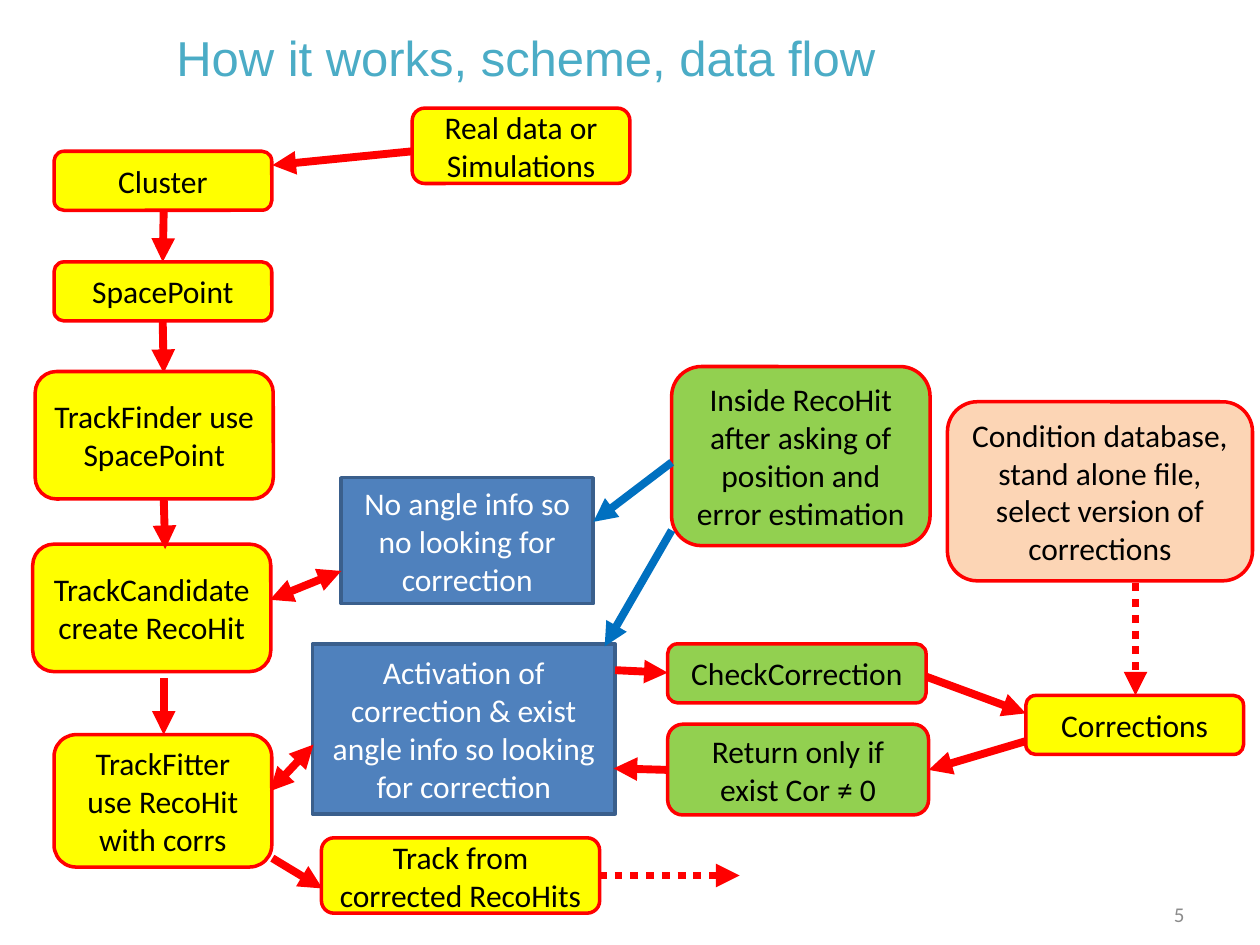
from lxml import etree
from pptx import Presentation
from pptx.dml import color
from pptx.enum import dml, shapes, text
from pptx.oxml import ns
from pptx.util import Cm, Pt

RED, BLUE, NAVY, STEEL = "FF0000", "0070C0", "3A5F8C", "4F81BD"
GOLD, GREEN, PEACH, TEAL = "FFFF00", "92D050", "FCD5B5", "4BACC6"
BLACK, WHITE, GRAY = "000000", "FFFFFF", "8C8C8C"

BOXES = [
    ("Cluster", 1.09, 3.05, 4.39, 1.19, GOLD),
    ("SpacePoint", 1.09, 5.28, 4.39, 1.19, GOLD),
    ("TrackFinder use SpacePoint", 0.71, 7.49, 4.8, 2.57, GOLD),
    ("TrackCandidate create RecoHit", 0.66, 10.97, 4.8, 2.57, GOLD),
    ("TrackFitter use RecoHit with corrs", 1.09, 14.81, 4.39, 2.67, GOLD),
    ("Real data or Simulations", 8.31, 2.18, 4.39, 1.52, GOLD),
    ("Track from corrected RecoHits", 6.48, 16.89, 5.61, 1.52, GOLD),
    ("Corrections", 20.68, 14.02, 4.39, 1.19, GOLD),
    ("CheckCorrection", 13.46, 12.98, 5.21, 1.19, GREEN),
    ("Return only if exist Cor ≠ 0", 13.46, 14.6, 5.26, 1.83, GREEN),
    ("Inside RecoHit after asking of position and error estimation",
     13.54, 7.39, 5.21, 3.61, GREEN),
    ("Condition database, stand alone file, select version of corrections",
     19.1, 8.1, 6.15, 3.61, PEACH),
    ("No angle info so no looking for correction",
     6.88, 9.63, 5.08, 2.54, STEEL),
    ("Activation of correction & exist angle info so looking for correction",
     6.3, 12.98, 6.1, 3.43, STEEL),
]

FLOWS = [
    (8.31, 3.05, 5.49, 3.33),
    (3.3, 4.24, 3.28, 5.28),
    (3.28, 6.48, 3.3, 7.52),
    (3.3, 10.03, 3.33, 11.07),
    (3.3, 13.67, 3.3, 14.81),
    (5.49, 17.3, 6.5, 17.91),
    (12.4, 13.51, 13.46, 13.56),
    (18.67, 13.64, 20.68, 14.38),
    (20.68, 14.94, 18.72, 15.52),
    (13.46, 15.52, 12.37, 15.49),
]
SWAPS = [(5.44, 12.09, 6.88, 11.51), (5.44, 15.95, 6.32, 15.01)]
ASKS = [(13.54, 9.32, 11.96, 10.52), (13.54, 10.69, 12.19, 13.03)]
DOTS = [(12.07, 17.65, 14.91, 17.65), (22.89, 11.76, 22.89, 14.02)]


def paint(part, tone):
    if isinstance(part, color.ColorFormat):
        part.rgb = color.RGBColor.from_string(tone)
    else:
        part.solid()
        part.fore_color.rgb = color.RGBColor.from_string(tone)


def write(shape, words, size=18, font="Calibri", tone=BLACK,
          align=text.PP_ALIGN.CENTER, anchor=text.MSO_ANCHOR.MIDDLE):
    frame = shape.text_frame
    frame.word_wrap = True
    frame.auto_size = text.MSO_AUTO_SIZE.NONE
    frame.vertical_anchor = anchor
    para = frame.paragraphs[0]
    para.alignment = align
    run = para.add_run()
    run.text = words
    run.font.size = Pt(size)
    run.font.name = font
    paint(run.font.color, tone)


def add_box(slide, words, left, top, width, height, fill):
    plain = fill == STEEL
    kind = shapes.MSO_SHAPE.RECTANGLE if plain else shapes.MSO_SHAPE.ROUNDED_RECTANGLE
    box = slide.shapes.add_shape(kind, Cm(left), Cm(top), Cm(width), Cm(height))
    box.shadow.inherit = False
    paint(box.fill, fill)
    paint(box.line.color, NAVY if plain else RED)
    box.line.width = Pt(2)
    write(box, words, tone=WHITE if plain else BLACK)


def add_arrow(slide, ends, tone=RED, both=False, dots=False):
    arrow = slide.shapes.add_connector(
        shapes.MSO_CONNECTOR.STRAIGHT, *[Cm(end) for end in ends])
    paint(arrow.line.color, tone)
    arrow.line.width = Pt(4.5)
    if dots:
        arrow.line.dash_style = dml.MSO_LINE.ROUND_DOT
    props = arrow.element.spPr
    line = props.find(ns.qn("a:ln"))
    for tip in ["a:headEnd", "a:tailEnd"] if both else ["a:tailEnd"]:
        etree.SubElement(line, ns.qn(tip), type="triangle")
    etree.SubElement(props, ns.qn("a:effectLst"))


def add_title(slide, words):
    title = slide.shapes.title
    title.left, title.top = Cm(3.3), Cm(0.43)
    title.width, title.height = Cm(20.4), Cm(1.45)
    write(title, words, size=28, font="Arial", tone=TEAL,
          align=text.PP_ALIGN.LEFT, anchor=text.MSO_ANCHOR.TOP)


def add_page(slide, words):
    page = slide.shapes.add_textbox(Cm(18.21), Cm(17.91), Cm(5.92), Cm(1.02))
    write(page, words, size=12, tone=GRAY, align=text.PP_ALIGN.RIGHT)


def main():
    deck = Presentation()
    deck.slide_width, deck.slide_height = Cm(25.4), Cm(19.05)
    slide = deck.slides.add_slide(deck.slide_layouts[5])
    add_title(slide, "How it works, scheme, data flow")
    add_page(slide, "5")
    for box in BOXES:
        add_box(slide, *box)
    for ends in FLOWS:
        add_arrow(slide, ends)
    for ends in SWAPS:
        add_arrow(slide, ends, both=True)
    for ends in ASKS:
        add_arrow(slide, ends, tone=BLUE)
    for ends in DOTS:
        add_arrow(slide, ends, dots=True)
    deck.save("out.pptx")


if __name__ == "__main__":
    main()
